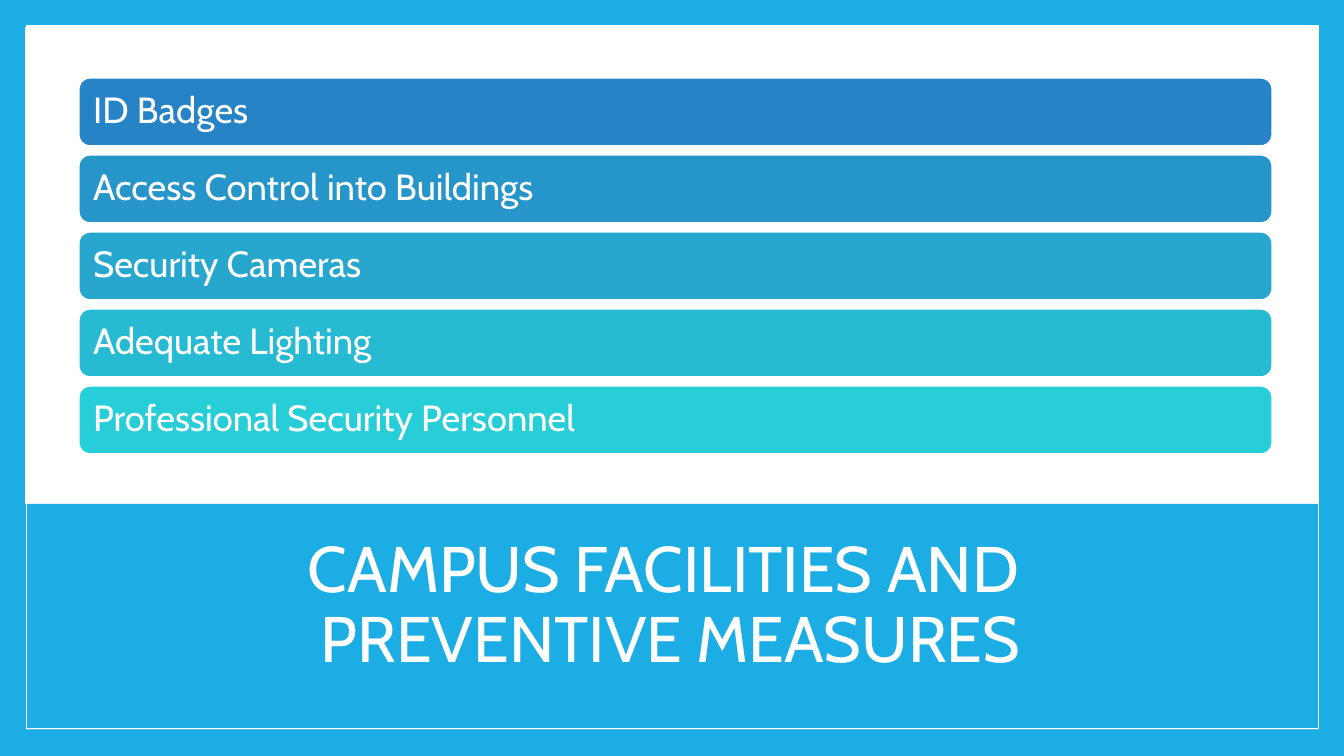
import pptx
import pptx.util
import pptx.dml.color
import pptx.enum.shapes
import pptx.enum.text
from pptx.util import Inches

COLORS = {
    "white": "FFFFFF",
    "sky": "1CADE4",
    "badges": "2683C6",
    "access": "2695CA",
    "cameras": "27A7CE",
    "lighting": "27BAD3",
    "personnel": "27CED7",
}
FONT = "Cabin"
SHAPES = pptx.enum.shapes.MSO_SHAPE


def rgb(name):
    return pptx.dml.color.RGBColor.from_string(COLORS[name])


def add_box(slide, kind, left, top, width, height, fill=None, line_width=None):
    shape = slide.shapes.add_shape(
        kind, Inches(left), Inches(top), Inches(width), Inches(height))
    shape.shadow.inherit = False
    if fill:
        shape.fill.solid()
        shape.fill.fore_color.rgb = rgb(fill)
    else:
        shape.fill.background()
    if line_width:
        shape.line.color.rgb = rgb("white")
        shape.line.width = pptx.util.Pt(line_width)
    else:
        shape.line.fill.background()
    return shape


presentation = pptx.Presentation()
presentation.slide_width = Inches(13.33)
presentation.slide_height = Inches(7.5)
slide = presentation.slides.add_slide(presentation.slide_layouts[6])
slide.background.fill.solid()
slide.background.fill.fore_color.rgb = rgb("sky")

# White panel, title band and thin frame
add_box(slide, SHAPES.RECTANGLE, 0.25, 0.27, 12.82, 6.97, "white")
add_box(slide, SHAPES.RECTANGLE, 0.25, 5, 12.82, 2.24, "sky")
add_box(slide, SHAPES.RECTANGLE, 0.26, 0.26, 12.82, 6.97, line_width=1)

# Title
title = slide.shapes.add_textbox(Inches(1.25), Inches(5.28), Inches(10.8), Inches(1.48))
title.text_frame.word_wrap = True
title.text_frame.vertical_anchor = pptx.enum.text.MSO_ANCHOR.MIDDLE
paragraph = title.text_frame.paragraphs[0]
paragraph.alignment = pptx.enum.text.PP_ALIGN.CENTER
paragraph.line_spacing = 0.9
for index, text in enumerate(["CAMPUS FACILITIES AND ", "PREVENTIVE MEASURES"]):
    if index:
        paragraph.add_line_break()
    run = paragraph.add_run()
    run.text = text
    run.font.name = FONT
    run.font.size = pptx.util.Pt(46)
    run.font.color.rgb = rgb("white")

# Measures, one bar each
measures = [
    ("ID Badges", "badges"),
    ("Access Control into Buildings", "access"),
    ("Security Cameras", "cameras"),
    ("Adequate Lighting", "lighting"),
    ("Professional Security Personnel", "personnel"),
]
BAR_TOP, BAR_PITCH = 0.77, 0.764
for index, (text, color) in enumerate(measures):
    bar = add_box(slide, SHAPES.ROUNDED_RECTANGLE, 0.78, BAR_TOP + index * BAR_PITCH,
                  11.84, 0.68, color, 1.5)
    frame = bar.text_frame
    frame.word_wrap = True
    frame.vertical_anchor = pptx.enum.text.MSO_ANCHOR.MIDDLE
    frame.margin_left = frame.margin_right = Inches(0.11)
    frame.margin_top = frame.margin_bottom = Inches(0.11)
    paragraph = frame.paragraphs[0]
    paragraph.alignment = pptx.enum.text.PP_ALIGN.LEFT
    paragraph.line_spacing = 0.9
    run = paragraph.add_run()
    run.text = text
    run.font.name = FONT
    run.font.size = pptx.util.Pt(26)
    run.font.color.rgb = rgb("white")

presentation.save("out.pptx")
